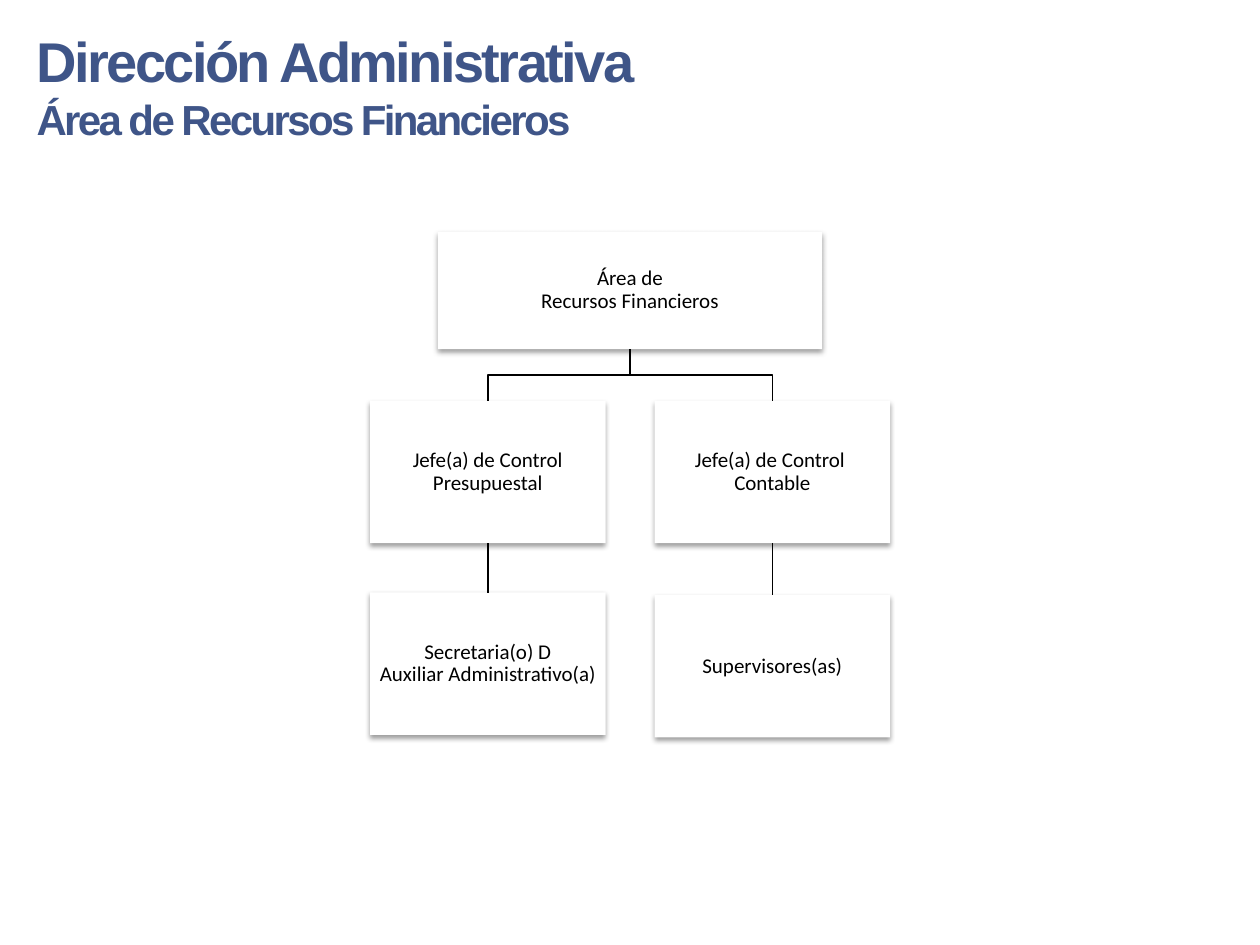
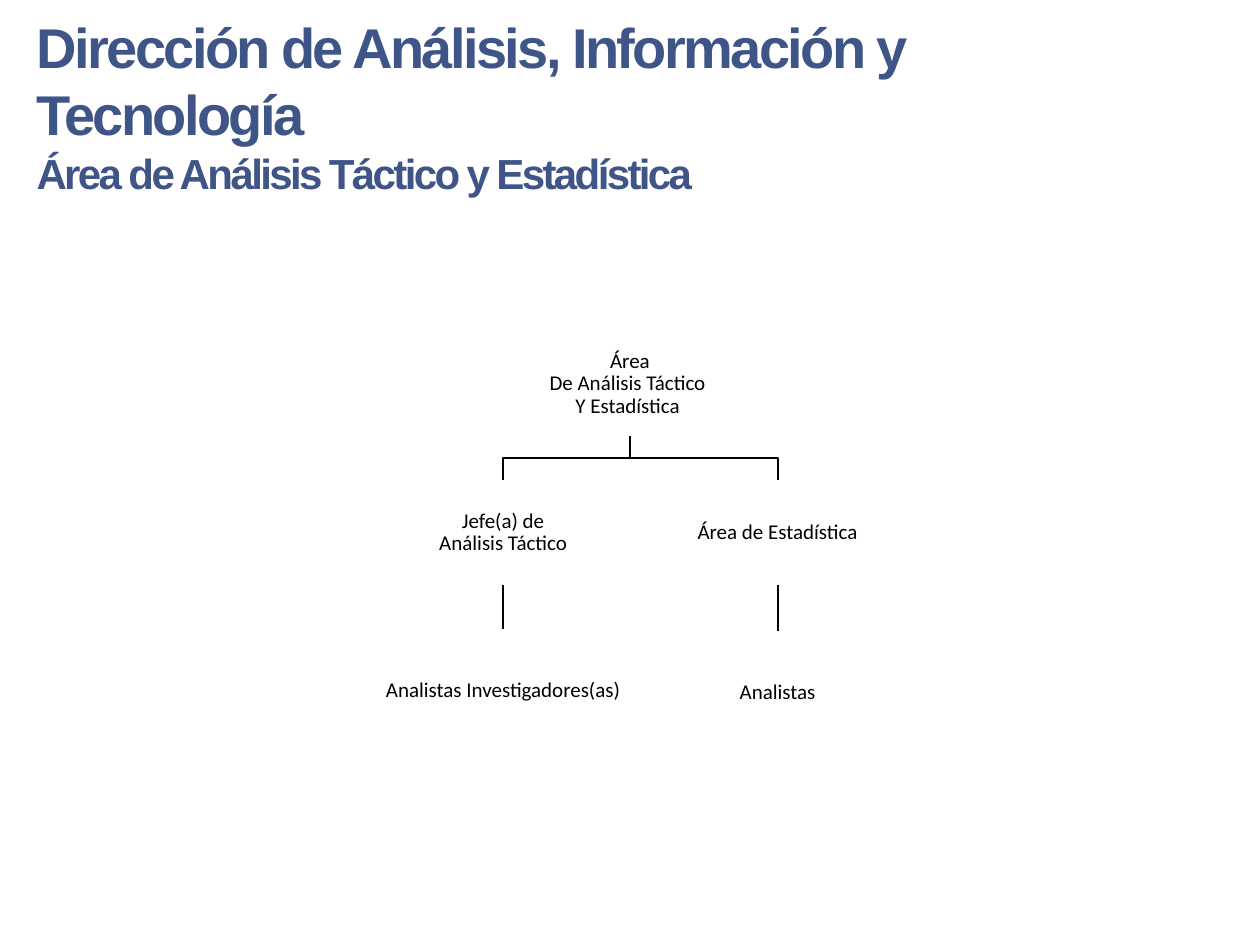
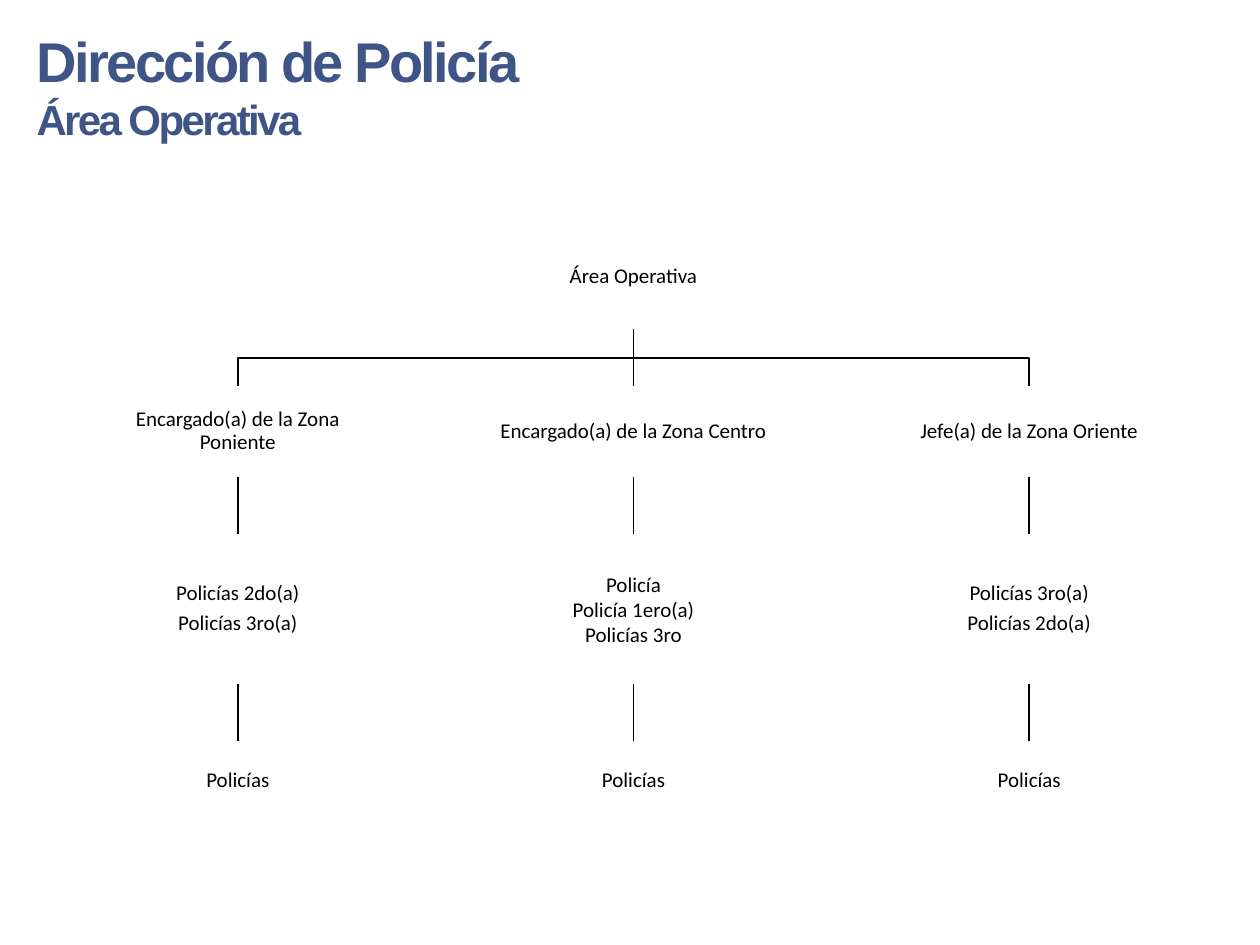
from dataclasses import dataclass

from lxml import etree
from pptx import Presentation
from pptx.dml.color import RGBColor
from pptx.enum import shapes as kinds, text as styles
from pptx.oxml import ns
from pptx.util import Pt


@dataclass(frozen=True)
class Theme:
    heading: RGBColor = RGBColor(0x3F, 0x55, 0x88)
    ink: RGBColor = RGBColor(0, 0, 0)
    paper: RGBColor = RGBColor(255, 255, 255)
    heading_font: str = "Arial"
    body_font: str = "Calibri"
    heading_size: float = 32
    subheading_size: float = 24
    body_size: float = 12
    heading_tracking: float = -1.5
    line_width: float = 1
    box_inset: float = 0.6


def write(frame, content, *, font, size, color, bold=False, tracking=0,
          align=styles.PP_ALIGN.LEFT, spacing=1.0, after=0):
    """Add one formatted paragraph, filling the empty first one if there is one."""
    last = frame.paragraphs[-1]
    paragraph = frame.add_paragraph() if last.text else last
    paragraph.alignment = align
    paragraph.line_spacing = spacing
    paragraph.space_after = Pt(after)
    run = paragraph.add_run()
    run.text = content
    run.font.name, run.font.size, run.font.bold = font, Pt(size), bold
    run.font.color.rgb = color
    if tracking:
        run.font._element.set("spc", str(round(tracking * 100)))


class OrgDeck:
    """Holds the theme and the current slide."""

    def __init__(self, theme):
        self.theme = theme
        self.deck = Presentation()
        self.deck.slide_width, self.deck.slide_height = Pt(720), Pt(540)
        self.slide = None

    def new_slide(self, heading, subheading, top=11.5, height=75):
        theme = self.theme
        self.slide = self.deck.slides.add_slide(self.deck.slide_layouts[5])
        title = self.slide.shapes.title
        title.left, title.top = Pt(13.7), Pt(top)
        title.width, title.height = Pt(537), Pt(height)
        frame = title.text_frame
        frame.word_wrap = True
        frame.auto_size = styles.MSO_AUTO_SIZE.SHAPE_TO_FIT_TEXT
        frame.vertical_anchor = styles.MSO_ANCHOR.TOP
        for content, size in ((heading, theme.heading_size),
                              (subheading, theme.subheading_size)):
            write(frame, content, font=theme.heading_font, size=size, bold=True,
                  color=theme.heading, tracking=theme.heading_tracking)

    def post(self, center, top, width, height, lines,
             raised=False, spacing=0.9, after=0):
        """Draw one post of the chart, placed by the middle of its top side."""
        theme = self.theme
        box = self.slide.shapes.add_shape(
            kinds.MSO_SHAPE.RECTANGLE, Pt(center - width / 2), Pt(top),
            Pt(width), Pt(height))
        box.fill.solid()
        box.fill.fore_color.rgb = theme.paper
        box.line.fill.background()
        box.shadow.inherit = False
        if raised:
            self.raise_box(box)
        frame = box.text_frame
        frame.word_wrap = True
        frame.vertical_anchor = styles.MSO_ANCHOR.MIDDLE
        frame.margin_left = frame.margin_right = Pt(theme.box_inset)
        frame.margin_top = frame.margin_bottom = Pt(theme.box_inset)
        for line in lines:
            write(frame, line, font=theme.body_font, size=theme.body_size,
                  color=theme.ink, align=styles.PP_ALIGN.CENTER,
                  spacing=spacing, after=after)
        return box

    def raise_box(self, box):
        effects = box._element.spPr.find(ns.qn("a:effectLst"))
        shadow = etree.SubElement(
            effects, ns.qn("a:outerShdw"), blurRad=str(Pt(3.1)),
            dist=str(Pt(1.6)), dir="5400000", rotWithShape="0")
        tint = etree.SubElement(shadow, ns.qn("a:srgbClr"), val=str(self.theme.ink))
        etree.SubElement(tint, ns.qn("a:alpha"), val="38000")

    def ink_line(self, line):
        line.color.rgb = self.theme.ink
        line.width = Pt(self.theme.line_width)

    def link(self, upper, lower):
        """Join two posts standing one above the other."""
        link = self.slide.shapes.add_connector(
            kinds.MSO_CONNECTOR.STRAIGHT, 0, 0, 0, 0)
        link.begin_connect(upper, 2)
        link.end_connect(lower, 0)
        self.ink_line(link.line)
        etree.SubElement(link._element.spPr, ns.qn("a:effectLst"))

    def branch(self, upper, lower):
        """Draw a stepped line to a post that stands to one side."""
        start_x, end_x = (box.left + box.width // 2 for box in (upper, lower))
        start_y, end_y = upper.top + upper.height, lower.top
        middle = (start_y + end_y) // 2
        outline = self.slide.shapes.build_freeform(start_x, start_y)
        outline.add_line_segments(
            [(start_x, middle), (end_x, middle), (end_x, end_y)], close=False)
        step = outline.convert_to_shape()
        step.fill.background()
        step.shadow.inherit = False
        self.ink_line(step.line)

    def chart(self, root, columns, **look):
        """Draw a root post and, below it, columns of linked posts.

        Each column is (center, posts); a post is (top, width, height, lines)
        and may end with a dict that changes its look.
        """
        head = self.post(*root, **look)
        for center, posts in columns:
            above = head
            for top, width, height, lines, *changes in posts:
                own = {**look, **(changes[0] if changes else {})}
                box = self.post(center, top, width, height, lines, **own)
                aside = above is head and center != root[0]
                (self.branch if aside else self.link)(above, box)
                above = box


def financial_resources(org):
    org.new_slide("Dirección Administrativa", "Área de Recursos Financieros")
    size = (134.6, 81.4)
    org.chart(
        (360, 132.5, 219.6, 67, ["Área de", "Recursos Financieros"]),
        [(278.8, [(229, *size, ["Jefe(a) de Control", "Presupuestal"]),
                  (338.6, *size, ["Secretaria(o) D", "Auxiliar Administrativo(a)"])]),
         (441.4, [(229, *size, ["Jefe(a) de Control ", "Contable"]),
                  (340, *size, ["Supervisores(as)"])])],
        raised=True)


def tactical_analysis(org):
    org.new_slide("Dirección de Análisis, Información y Tecnología",
                  "Área de Análisis Táctico y Estadística", top=3.6, height=113.8)
    left, right = 143.3, 120.2
    org.chart(
        (360, 189.4, 195.8, 60, ["Área", "De Análisis Táctico ", "Y Estadística "]),
        [(287.5, [(274.4, left, 60, ["Jefe(a) de", "Análisis Táctico"]),
                  (359.6, left, 70.6, ["Analistas Investigadores(as)"])]),
         (444.4, [(274.4, right, 60, ["Área de Estadística"]),
                  (360.8, right, 70.6, ["Analistas"])])])


def operations(org):
    org.new_slide("Dirección de Policía", "Área Operativa")
    middle, step = 362, 226.1
    plain = {"spacing": 1.0, "after": 0}
    zones = [
        ("Encargado(a) de la Zona Poniente", ["Policías 2do(a)", "Policías 3ro(a)"], {}),
        ("Encargado(a) de la Zona Centro",
         ["Policía", "Policía 1ero(a)", "Policías 3ro"], plain),
        ("Jefe(a) de la Zona Oriente", ["Policías 3ro(a)", "Policías 2do(a)"], {}),
    ]
    columns = [
        (middle + (index - 1) * step,
         [(220.8, 156.2, 51.5, [chief]),
          (305.2, 193.7, 85.4, ranks, look),
          (423.4, 164.2, 45.4, ["Policías"])])
        for index, (chief, ranks, look) in enumerate(zones)]
    org.chart((middle, 128.2, 172.8, 60, ["Área Operativa"]), columns, after=4.2)


def main():
    org = OrgDeck(Theme())
    financial_resources(org)
    tactical_analysis(org)
    operations(org)
    org.deck.save("out.pptx")


if __name__ == "__main__":
    main()
